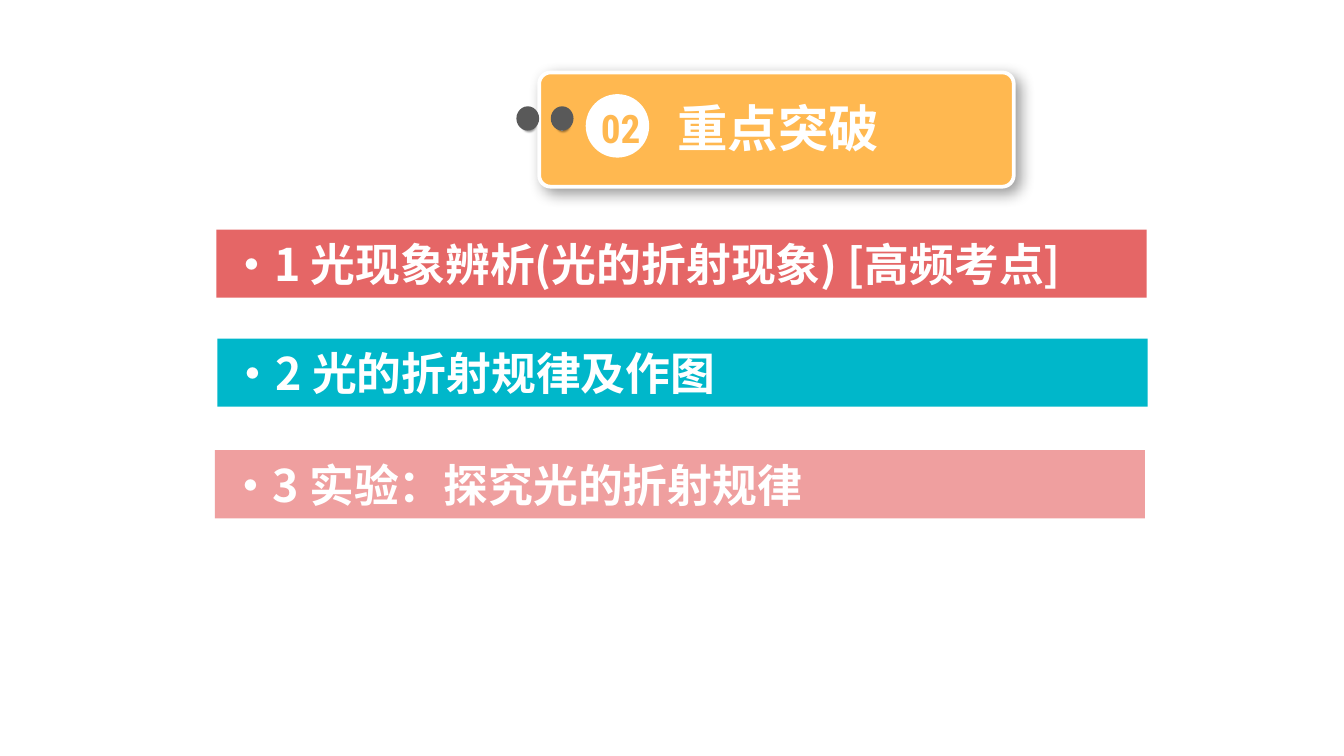
"""Build the section slide with a title card and three topic bars."""
from lxml import etree
from pptx import Presentation
from pptx.dml.color import RGBColor
from pptx.enum.shapes import MSO_SHAPE
from pptx.enum.text import MSO_ANCHOR, PP_ALIGN
from pptx.oxml.ns import qn
from pptx.util import Cm, Pt

OVAL, RECT, ROUND = MSO_SHAPE.OVAL, MSO_SHAPE.RECTANGLE, MSO_SHAPE.ROUNDED_RECTANGLE
LEFT, CENTER, MIDDLE = PP_ALIGN.LEFT, PP_ALIGN.CENTER, MSO_ANCHOR.MIDDLE

HUES = {"white": "FFFFFF", "black": "000000", "gold": "FFB850", "dark": "595959",
        "red": "E56666", "teal": "00B7CA", "pink": "EF9F9F"}
METAL = [(0, "FFFFFF"), (17, "A6A6A6"), (35, "F2F2F2"),
         (55, "A6A6A6"), (75, "F2F2F2"), (100, "A6A6A6")]
SANS, SLIM = "Noto Sans CJK SC", "Roboto Condensed"

TOPICS = [
    ("·1 光现象辨析(光的折射现象) [高频考点]", "red", 4.09, 4.34),
    ("·2 光的折射规律及作图", "teal", 4.11, 6.4),
    ("·3 实验：探究光的折射规律", "pink", 4.06, 8.51),
]
LABELS = [
    ("重点突破", 27, SANS, "white", (11.56, 1.7, 6.3, 1.42)),
    ("02", 21, SLIM, "gold", (11.02, 1.85, 1.42, 1.14)),
]
DOT_X, DOT_GAP = 10.41, 0.65


def color(hue):
    return RGBColor.from_string(HUES[hue])


def shape(kind, box, hue):
    item = slide.shapes.add_shape(kind, *map(Cm, box))
    item.shadow.inherit = False
    item.fill.solid()
    item.fill.fore_color.rgb = color(hue)
    item.line.fill.background()
    return item


def shade(item, blur, dist):
    effects = item._element.spPr.find(qn("a:effectLst"))
    outer = etree.SubElement(effects, qn("a:outerShdw"), blurRad=str(Pt(blur)),
                             dist=str(Pt(dist)), dir="2700000", algn="tl", rotWithShape="0")
    tint = etree.SubElement(outer, qn("a:srgbClr"), val=HUES["black"])
    etree.SubElement(tint, qn("a:alpha"), val="40000")


def polish(item):
    item.fill.gradient()
    item.fill.gradient_angle = 315
    stops = item._element.spPr.find(qn("a:gradFill")).find(qn("a:gsLst"))
    for old in list(stops):
        stops.remove(old)
    for place, tint in METAL:
        stop = etree.SubElement(stops, qn("a:gs"), pos=str(place * 1000))
        etree.SubElement(stop, qn("a:srgbClr"), val=tint)


def write(item, text, size, face, hue, align):
    frame = item.text_frame
    frame.word_wrap = True
    frame.vertical_anchor = MIDDLE
    para = frame.paragraphs[0]
    para.text = text
    para.alignment = align
    font = para.font
    font.size, font.bold, font.name = Pt(size), True, face
    font.color.rgb = color(hue)
    props = para._p.pPr.find(qn("a:defRPr"))
    etree.SubElement(props, qn("a:ea"), typeface=face)


deck = Presentation()
deck.slide_width, deck.slide_height = Cm(25.4), Cm(14.29)
slide = deck.slides.add_slide(deck.slide_layouts[6])

card = shape(ROUND, (10.19, 1.37, 8.97, 2.16), "gold")
card.adjustments[0] = 0.1
card.line.color.rgb = color("white")
card.line.width = Pt(2)
shade(card, 8, 4)

for left in (DOT_X, DOT_X - DOT_GAP):
    ring = shape(OVAL, (left + 0.09, 2.21, 0.25, 0.25), "white")
    ring.rotation = 270
    polish(ring)
    shade(ring, 1, 1)
    shape(OVAL, (left, 2.01, 0.43, 0.46), "dark")

shape(OVAL, (11.07, 1.78, 1.2, 1.2), "white")
for text, size, face, hue, box in LABELS:
    label = slide.shapes.add_textbox(*map(Cm, box))
    write(label, text, size, face, hue, CENTER)

for text, hue, left, top in TOPICS:
    bar = shape(RECT, (left, top, 17.58, 1.29), hue)
    write(bar, text, 24, SANS, "white", LEFT)

deck.save("out.pptx")
